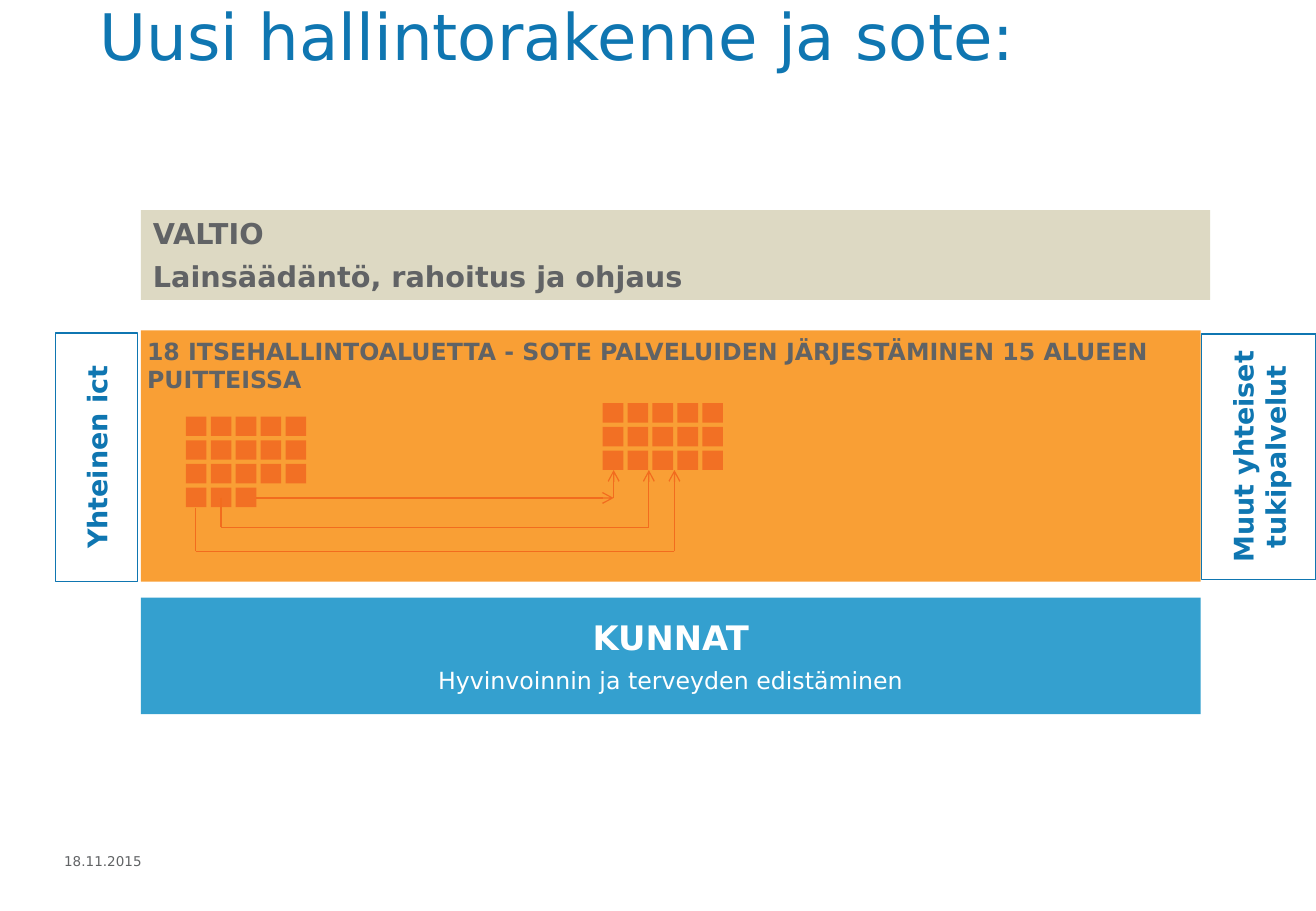
from itertools import pairwise

from lxml.etree import SubElement
from pptx import Presentation
from pptx.dml.color import RGBColor
from pptx.enum.shapes import MSO_CONNECTOR, MSO_SHAPE
from pptx.enum.text import MSO_ANCHOR, PP_ALIGN
from pptx.oxml.ns import qn
from pptx.util import Inches, Pt

FONT = "DejaVu Sans"
WHITE = RGBColor(0xFF, 0xFF, 0xFF)
GREY = RGBColor(0x61, 0x63, 0x65)
BLUE = RGBColor(0x0F, 0x76, 0xB1)
LIGHT_BLUE = RGBColor(0x34, 0xA0, 0xCF)
AMBER = RGBColor(0xF9, 0x9F, 0x35)
ORANGE = RGBColor(0xF2, 0x70, 0x24)
ARROW_ORANGE = RGBColor(0xF2, 0x6C, 0x1E)
BEIGE = RGBColor(0xDD, 0xD9, 0xC3)

SQUARE_WIDTH, SQUARE_HEIGHT = 0.17, 0.16
COLUMN_STEP, ROW_STEP = 0.205, 0.195


def paint(shape, fill=None, line=None):
    if fill is None:
        shape.fill.background()
    else:
        shape.fill.solid()
        shape.fill.fore_color.rgb = fill
    if line is None:
        shape.line.fill.background()
    else:
        shape.line.color.rgb = line
        shape.line.width = Pt(0.75)


def add_box(slide, left, top, width, height, fill=None, line=None):
    box = slide.shapes.add_shape(MSO_SHAPE.RECTANGLE, Inches(left), Inches(top),
                                 Inches(width), Inches(height))
    box.shadow.inherit = False
    paint(box, fill, line)
    return box


def add_text_box(slide, left, top, width, height):
    return slide.shapes.add_textbox(Inches(left), Inches(top), Inches(width), Inches(height))


def set_frame(shape, anchor=MSO_ANCHOR.TOP, side=0.1, edge=0.05):
    frame = shape.text_frame
    frame.word_wrap = True
    frame.vertical_anchor = anchor
    frame.margin_left = frame.margin_right = Inches(side)
    frame.margin_top = frame.margin_bottom = Inches(edge)


def write(shape, text, size=14, color=GREY, bold=False, align=PP_ALIGN.LEFT, after=0):
    frame = shape.text_frame
    paragraph = frame.add_paragraph() if frame.text else frame.paragraphs[0]
    paragraph.text = text
    paragraph.alignment = align
    paragraph.space_before = Pt(0)
    paragraph.space_after = Pt(after)
    font = paragraph.runs[0].font
    font.name = FONT
    font.size = Pt(size)
    font.bold = bold
    font.color.rgb = color


def add_support_service(slide, text, left, top, width, height):
    service = add_box(slide, left, top, width, height, line=BLUE)
    service.rotation = 270
    set_frame(service, MSO_ANCHOR.MIDDLE, 0, 0.2)
    write(service, text, size=16, color=BLUE, bold=True, align=PP_ALIGN.CENTER)


def add_areas(slide, left, top, row_lengths):
    for row, length in enumerate(row_lengths):
        for column in range(length):
            add_box(slide, left + column * COLUMN_STEP, top + row * ROW_STEP,
                    SQUARE_WIDTH, SQUARE_HEIGHT, fill=ORANGE)


def add_line(slide, start, end, arrow=False):
    line = slide.shapes.add_connector(MSO_CONNECTOR.STRAIGHT, Inches(start[0]),
                                      Inches(start[1]), Inches(end[0]), Inches(end[1]))
    line.line.color.rgb = ARROW_ORANGE
    line.line.width = Pt(0.75)
    properties = line._element.spPr
    if arrow:
        SubElement(properties.find(qn("a:ln")), qn("a:tailEnd"), type="arrow")
    SubElement(properties, qn("a:effectLst"))


def add_route(slide, points, arrows):
    for (start, end), arrow in zip(pairwise(points), arrows):
        add_line(slide, start, end, arrow)


def main():
    presentation = Presentation()
    presentation.slide_width = Inches(10.83)
    presentation.slide_height = Inches(7.5)
    slide = presentation.slides.add_slide(presentation.slide_layouts[5])

    title = slide.shapes.title
    title.left, title.top = Inches(0.72), Inches(-0.42)
    title.width, title.height = Inches(9.57), Inches(1.42)
    paint(title, WHITE, WHITE)
    set_frame(title, MSO_ANCHOR.MIDDLE)
    write(title, "Uusi hallintorakenne ja sote:", size=38, color=BLUE)

    date = add_text_box(slide, 0.43, 6.97, 2.53, 0.4)
    set_frame(date)
    write(date, "18.11.2015", size=8)

    state = add_box(slide, 1.16, 1.73, 8.8, 0.74, fill=BEIGE)
    set_frame(state)
    for text in ("VALTIO", "Lainsäädäntö, rahoitus ja ohjaus"):
        write(state, text, size=17, bold=True, after=5)

    add_box(slide, 1.16, 2.72, 8.72, 2.07, fill=AMBER)
    regions = add_text_box(slide, 1.21, 2.61, 8.51, 1.06)
    set_frame(regions, side=0, edge=0.16)
    write(regions, "18 ITSEHALLINTOALUETTA - SOTE PALVELUIDEN JÄRJESTÄMINEN 15 ALUEEN PUITTEISSA",
          bold=True, after=5)

    municipalities = add_box(slide, 1.16, 4.92, 8.72, 0.96, fill=LIGHT_BLUE)
    set_frame(municipalities, MSO_ANCHOR.MIDDLE, 1.18, 0.16)
    write(municipalities, "KUNNAT", size=20, color=WHITE, bold=True,
          align=PP_ALIGN.CENTER, after=5)
    write(municipalities, "Hyvinvoinnin ja terveyden edistäminen", color=WHITE,
          align=PP_ALIGN.CENTER)

    add_support_service(slide, "Yhteinen ict", -0.23, 3.43, 2.05, 0.67)
    add_support_service(slide, "Muut yhteiset tukipalvelut", 9.35, 3.29, 2.02, 0.94)

    add_areas(slide, 1.53, 3.43, (5, 5, 5, 3))
    add_areas(slide, 4.96, 3.32, (5, 5, 5))

    add_route(slide, [(2.11, 4.1), (5.05, 4.1), (5.05, 3.87)], (True, True))
    for source_x, source_y, turn_y, target_x in ((1.82, 4.1, 4.34, 5.34),
                                                 (1.61, 4.18, 4.54, 5.55)):
        add_route(slide, [(source_x, source_y), (source_x, turn_y),
                          (target_x, turn_y), (target_x, 3.87)], (False, False, True))

    presentation.save("out.pptx")


if __name__ == "__main__":
    main()
